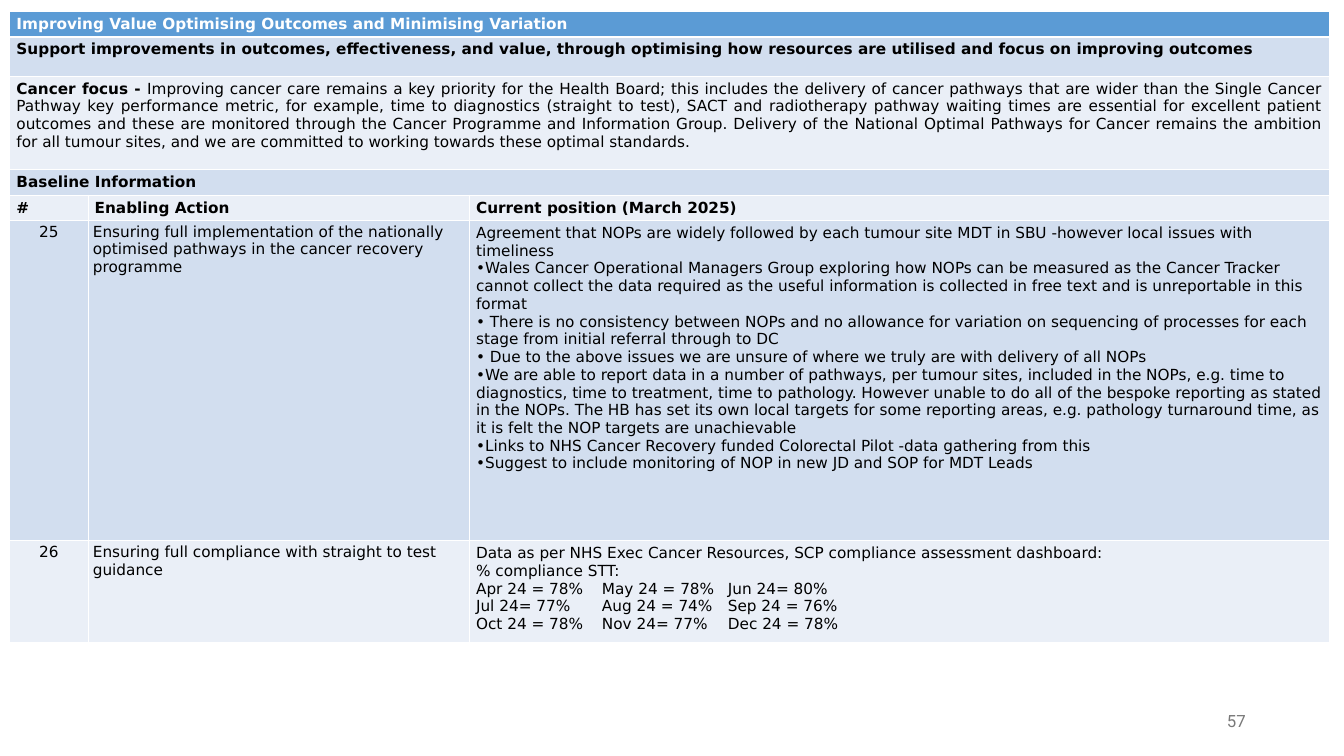
from dataclasses import dataclass

from lxml.etree import SubElement
from pptx import Presentation
from pptx.dml.color import RGBColor
from pptx.enum.text import MSO_ANCHOR as Anchor, PP_ALIGN as Align
from pptx.oxml import parse_xml
from pptx.oxml.ns import nsdecls, qn
from pptx.util import Inches, Pt


@dataclass(frozen=True)
class Theme:
    font: str = "DejaVu Sans"
    number_font: str = "Roboto"
    body_size: float = 18
    number_size: float = 19.8
    header: str = "5B9BD5"
    bands: tuple = ("EAEFF7", "D2DEEF")
    white: str = "FFFFFF"
    black: str = "000000"
    grey: str = "797979"
    rule: float = 1
    header_rule: float = 3


theme = Theme()

TITLE = "Improving Value Optimising Outcomes and Minimising Variation"
AIM = ("Support improvements in outcomes, effectiveness, and value, through optimising "
       "how resources are utilised and focus on improving outcomes")
FOCUS_LABEL = "Cancer focus - "
FOCUS = (
    "Improving cancer care remains a key priority for the Health Board; this includes the "
    "delivery of cancer pathways that are wider than the Single Cancer Pathway key performance "
    "metric, for example, time to diagnostics (straight to test), SACT and radiotherapy pathway "
    "waiting times are essential for excellent patient outcomes and these are monitored through "
    "the Cancer Programme and Information Group. Delivery of the National Optimal Pathways for "
    "Cancer remains the ambition for all tumour sites, and we are committed to working towards "
    "these optimal standards."
)
BASELINE = "Baseline Information"
HEADINGS = ("#", "Enabling Action", "Current position (March 2025)")
ACTIONS = [
    ("25",
     "Ensuring full implementation of the nationally optimised pathways in the cancer recovery "
     "programme",
     Align.LEFT,
     ["Agreement that NOPs are widely followed by each tumour site MDT in SBU -however local "
      "issues with timeliness",
      "•Wales Cancer Operational Managers Group exploring how NOPs can be measured as the Cancer "
      "Tracker cannot collect the data required as the useful information is collected in free "
      "text and is unreportable in this format",
      "• There is no consistency between NOPs and no allowance for variation on sequencing of "
      "processes for each stage from initial referral through to DC",
      "• Due to the above issues we are unsure of where we truly are with delivery of all NOPs",
      "•We are able to report data in a number of pathways, per tumour sites, included in the "
      "NOPs, e.g. time to diagnostics, time to treatment, time to pathology. However unable to do "
      "all of the bespoke reporting as stated in the NOPs. The HB has set its own local targets "
      "for some reporting areas, e.g. pathology turnaround time, as it is felt the NOP targets "
      "are unachievable",
      "•Links to NHS Cancer Recovery funded Colorectal Pilot -data gathering from this",
      "•Suggest to include monitoring of NOP in new JD and SOP for MDT Leads"]),
    ("26",
     "Ensuring full compliance with straight to test guidance",
     Align.JUSTIFY,
     ["Data as per NHS Exec Cancer Resources, SCP compliance assessment dashboard:",
      "% compliance STT:",
      "Apr 24 = 78%\tMay 24 = 78%\tJun 24= 80%",
      "Jul 24= 77%\tAug 24 = 74%\tSep 24 = 76%",
      "Oct 24 = 78%\tNov 24= 77%\tDec 24 = 78%"]),
]
PAGE = "57"

COLUMNS = (1.28, 6.24, 14.07)
ROWS = (0.4, 0.65, 1.52, 0.4, 0.42, 5.24, 1.66)
MONTH_TABS = (2.06, 4.12)
WIDE, NARROW = (0.11, 0.06), (0.08, 0.04)


def add_run(paragraph, words, bold=False, color=theme.black,
            font=theme.font, size=theme.body_size):
    run = paragraph.add_run()
    run.text = words
    run.font.name, run.font.size, run.font.bold = font, Pt(size), bold
    run.font.color.rgb = RGBColor.from_string(color)


def add_month_tabs(paragraph):
    tabs = SubElement(paragraph._p.get_or_add_pPr(), qn("a:tabLst"))
    for position in MONTH_TABS:
        SubElement(tabs, qn("a:tab"), pos=str(Inches(position)), algn="l")


def fill_cell(cell, lines, bold=False, color=theme.black, align=Align.LEFT,
              anchor=Anchor.TOP, inset=WIDE, label=""):
    cell.vertical_anchor = anchor
    cell.margin_left = cell.margin_right = Inches(inset[0])
    cell.margin_top = cell.margin_bottom = Inches(inset[1])
    for index, line in enumerate(lines):
        frame = cell.text_frame
        paragraph = frame.add_paragraph() if index else frame.paragraphs[0]
        paragraph.alignment = align
        if label:
            add_run(paragraph, label, True, color)
        if "\t" in line:
            add_month_tabs(paragraph)
        add_run(paragraph, line, bold, color)


def paint_cell(cell, row):
    cell.fill.solid()
    cell.fill.fore_color.rgb = RGBColor.from_string(theme.bands[row % 2] if row else theme.header)
    widths = {"L": theme.rule, "R": theme.rule,
              "T": theme.header_rule if row == 1 else theme.rule,
              "B": theme.header_rule if row == 0 else theme.rule}
    for index, (side, width) in enumerate(widths.items()):
        cell._tc.get_or_add_tcPr().insert(index, parse_xml(
            f'<a:ln{side} {nsdecls("a")} w="{Pt(width)}"><a:solidFill>'
            f'<a:srgbClr val="{theme.white}"/></a:solidFill></a:ln{side}>'))


def add_plan(slide):
    table = slide.shapes.add_table(
        len(ROWS), len(COLUMNS), Inches(0.16), Inches(0.18),
        Inches(sum(COLUMNS)), Inches(sum(ROWS))).table
    for column, width in zip(table.columns, COLUMNS):
        column.width = Inches(width)
    for row, height in enumerate(ROWS):
        table.rows[row].height = Inches(height)
        for column in range(len(COLUMNS)):
            paint_cell(table.cell(row, column), row)

    banners = [
        dict(lines=[TITLE], bold=True, color=theme.white, anchor=Anchor.MIDDLE),
        dict(lines=[AIM], bold=True),
        dict(lines=[FOCUS], label=FOCUS_LABEL, align=Align.JUSTIFY),
        dict(lines=[BASELINE], bold=True, align=Align.JUSTIFY, anchor=Anchor.MIDDLE),
    ]
    for row, banner in enumerate(banners):
        table.cell(row, 0).merge(table.cell(row, len(COLUMNS) - 1))
        fill_cell(table.cell(row, 0), **banner)

    heading_row = len(banners)
    for column, heading in enumerate(HEADINGS):
        fill_cell(table.cell(heading_row, column), [heading], bold=True,
                  align=Align.JUSTIFY, anchor=Anchor.MIDDLE)
    for row, (number, action, align, position) in enumerate(ACTIONS, heading_row + 1):
        fill_cell(table.cell(row, 0), [number], align=Align.CENTER, inset=NARROW)
        fill_cell(table.cell(row, 1), [action], inset=NARROW)
        fill_cell(table.cell(row, 2), position, align=align)


def add_page_number(slide):
    frame = slide.shapes.add_textbox(
        Inches(15.53), Inches(11.46), Inches(4.95), Inches(0.66)).text_frame
    frame.word_wrap = True
    frame.vertical_anchor = Anchor.MIDDLE
    paragraph = frame.paragraphs[0]
    paragraph.alignment = Align.RIGHT
    add_run(paragraph, PAGE, color=theme.grey, font=theme.number_font, size=theme.number_size)


def main():
    deck = Presentation()
    deck.slide_width, deck.slide_height = Inches(21.99), Inches(12.37)
    slide = deck.slides.add_slide(deck.slide_layouts[6])
    add_page_number(slide)
    add_plan(slide)
    deck.save("out.pptx")


if __name__ == "__main__":
    main()
